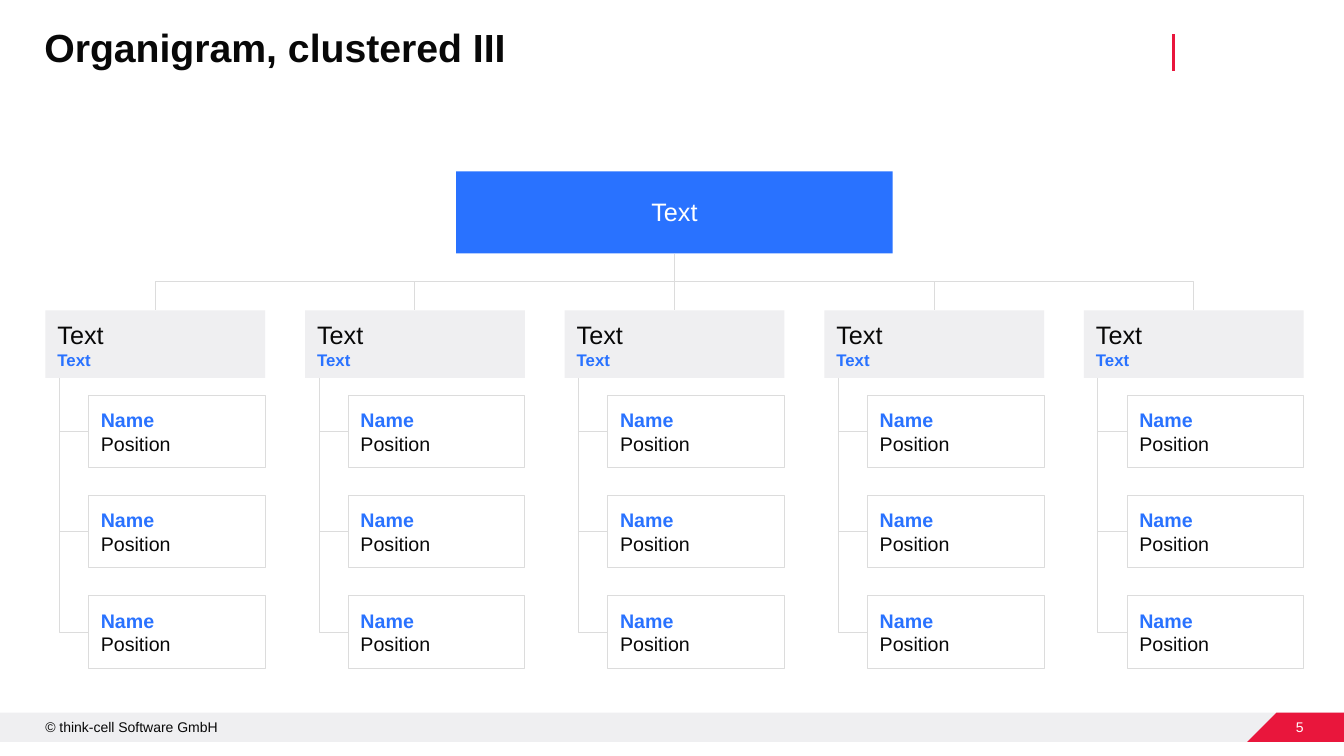
from lxml import etree
from pptx import Presentation
from pptx import util as u
from pptx.dml.color import RGBColor
from pptx.enum import shapes, text
from pptx.oxml.ns import qn

BLACK = RGBColor(0x08, 0x08, 0x08)
WHITE = RGBColor(0xFF, 0xFF, 0xFF)
BLUE = RGBColor(0x29, 0x72, 0xFF)
RED = RGBColor(0xE9, 0x16, 0x3C)
PALE = RGBColor(0xEF, 0xEF, 0xF1)
RULE = RGBColor(0xDC, 0xDC, 0xDC)

SLIDE_W, SLIDE_H = u.Inches(13.33), u.Inches(7.5)
COLUMNS, ROWS = 133.3, 75

TEAMS = [("Text", "Text", [("Name", "Position")] * 3)] * 5


def col(count):
    return round(SLIDE_W * count / COLUMNS)


def row(count):
    return round(SLIDE_H * count / ROWS)


def place(left, top, width, height):
    return col(left), row(top), col(width), row(height)


def style(size, color, bold=False):
    return {"name": "Arial", "size": u.Pt(size), "bold": bold}, color


def write(item, lines, align=text.PP_ALIGN.LEFT, anchor=text.MSO_ANCHOR.MIDDLE,
          insets=(0, 0), spacing=1.0, wrap=True):
    frame = item.text_frame
    side, edge = col(insets[0]), row(insets[1])
    layout = {"word_wrap": wrap, "vertical_anchor": anchor, "margin_left": side,
              "margin_right": side, "margin_top": edge, "margin_bottom": edge}
    for key, value in layout.items():
        setattr(frame, key, value)
    paragraph = frame.paragraphs[0]
    paragraph.alignment = align
    paragraph.line_spacing = spacing
    for number, (words, (font_format, color)) in enumerate(lines):
        if number:
            paragraph.add_line_break()
        run = paragraph.add_run()
        run.text = words
        for key, value in font_format.items():
            setattr(run.font, key, value)
        run.font.color.rgb = color


def paint(item, fill, outline=None):
    item.shadow.inherit = False
    item.fill.solid()
    item.fill.fore_color.rgb = fill
    if outline is None:
        item.line.fill.background()
    else:
        item.line.color.rgb = outline
        item.line.width = u.Pt(0.75)


def card(slide, box, fill, outline=None):
    item = slide.shapes.add_shape(shapes.MSO_SHAPE.RECTANGLE, *place(*box))
    paint(item, fill, outline)
    return item


def label(slide, box, words, words_style, **layout):
    write(slide.shapes.add_textbox(*place(*box)), [(words, words_style)], **layout)


def connect(slide, kind, start, end, color=RULE, weight=0.75):
    link = slide.shapes.add_connector(
        kind, col(start[0]), row(start[1]), col(end[0]), row(end[1]))
    link.line.color.rgb = color
    link.line.width = u.Pt(weight)
    etree.SubElement(link._element.spPr, qn("a:effectLst"))
    return link


def turn(link, degrees, flip=False):
    frame = link._element.spPr.find(qn("a:xfrm"))
    frame.set("rot", str(degrees * 60000))
    frame.set("flipH", str(int(flip)))


def draw_branch(slide, head, header):
    start = head.left + head.width // 2, head.top + head.height
    end = header.left + header.width // 2, header.top
    run, drop = end[0] - start[0], end[1] - start[1]
    straight = abs(run) < col(0.1)
    kind = shapes.MSO_CONNECTOR.STRAIGHT if straight else shapes.MSO_CONNECTOR.ELBOW
    link = connect(slide, kind, (0, 0), (1, 1))
    link.begin_connect(head, 2)
    link.end_connect(header, 0)
    if not straight:
        link.width, link.height = drop, abs(run)
        link.left = (start[0] + end[0] - drop) // 2
        link.top = (start[1] + end[1] - abs(run)) // 2
        turn(link, 270 if run > 0 else 90, run > 0)


def draw_team(slide, box, team):
    left, top, width, height = box
    title, subtitle, members = team
    header_h, member_h, indent, stem = 6.7, 7.2, 4.3, 1.4
    first = top + header_h + 1.7
    pitch = (top + height - member_h - first) / (len(members) - 1)
    header = card(slide, (left, top, width, header_h), PALE)
    write(header, [(title, style(18, BLACK)), (subtitle, style(12, BLUE, True))],
          insets=(1.2, 0.8))
    for number, (name, position) in enumerate(members):
        member_top = first + number * pitch
        link = connect(slide, shapes.MSO_CONNECTOR.ELBOW,
                       (left + stem, top + header_h),
                       (left + indent, member_top + member_h / 2))
        link._element.spPr.find(qn("a:prstGeom")).set("prst", "bentConnector2")
        turn(link, 180)
        member = card(slide, (left + indent, member_top, width - indent, member_h),
                      WHITE, RULE)
        write(member, [(name, style(14, BLUE, True)), (position, style(14, BLACK))],
              insets=(1.2, 0.8))
    return header


def draw_organigram(slide, box):
    left, top, width, height = box
    head_w, team_w, team_drop = 43.3, 21.8, 13.8
    pitch = (width - team_w) / (len(TEAMS) - 1)
    head = card(slide, (left + (width - head_w) / 2, top, head_w, 8.15), BLUE)
    write(head, [("Text", style(18, WHITE))], align=text.PP_ALIGN.CENTER,
          insets=(2.4, 0.8), spacing=0.95)
    for number, team in enumerate(TEAMS):
        team_box = (left + number * pitch, top + team_drop, team_w, height - team_drop)
        draw_branch(slide, head, draw_team(slide, team_box, team))


def draw_title(slide, box):
    left, top, width, height = box
    label(slide, (left, top, width, height), "Organigram, clustered III",
          style(28, BLACK, True), anchor=text.MSO_ANCHOR.TOP, spacing=0.9)
    mark = left + width + 1.7
    connect(slide, shapes.MSO_CONNECTOR.STRAIGHT, (mark, top + 0.6),
            (mark, top + height), RED, 2.25)


def draw_footer(slide, box):
    left, top, width, height = box
    right, bottom = left + width, top + height
    card(slide, box, PALE)
    label(slide, (left + 4.5, top + 0.6, 24.6, 1.7), "© think-cell Software GmbH",
          style(10, BLACK), anchor=text.MSO_ANCHOR.TOP)
    outline = slide.shapes.build_freeform(col(right - 6.7), row(top))
    outline.add_line_segments([(col(right), row(top)), (col(right), row(bottom)),
                               (col(right - 9.6), row(bottom))])
    paint(outline.convert_to_shape(), RED)
    label(slide, (right - 5.7, top + 0.6, 1.7, 1.7), "5", style(10, WHITE),
          align=text.PP_ALIGN.RIGHT, wrap=False)


def main():
    deck = Presentation()
    deck.slide_width, deck.slide_height = SLIDE_W, SLIDE_H
    slide = deck.slides.add_slide(deck.slide_layouts[6])
    draw_footer(slide, (0, 70.7, COLUMNS, 2.9))
    draw_title(slide, (4.4, 2.8, 110.3, 4.2))
    draw_organigram(slide, (4.5, 17, 124.8, 49.3))
    deck.save("out.pptx")


if __name__ == "__main__":
    main()
